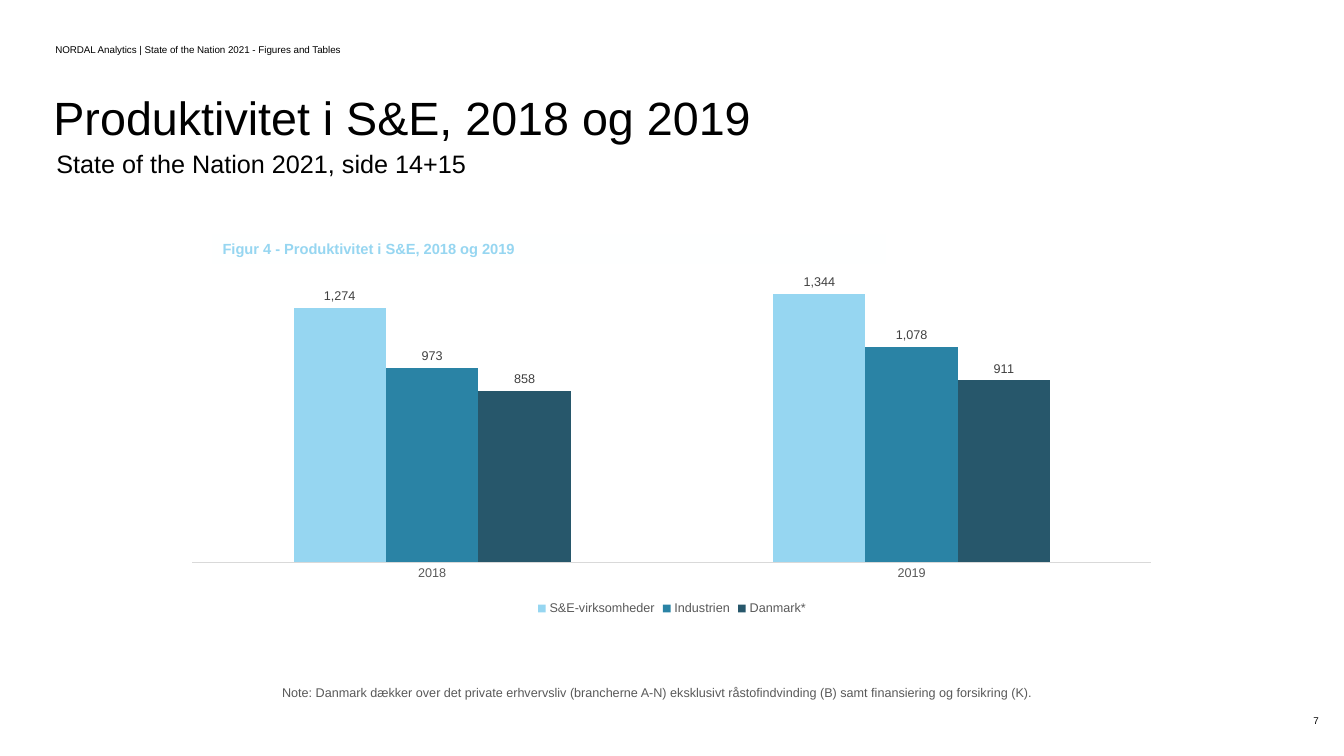
import pptx
import pptx.chart.data
import pptx.dml.color
import pptx.enum.chart
import pptx.enum.shapes
import pptx.enum.text
import pptx.oxml
import pptx.util

ALIGN = pptx.enum.text.PP_ALIGN
ANCHOR = pptx.enum.text.MSO_ANCHOR
FONT = "Arial"
WIDTH, HEIGHT = 13.33, 7.5
MARGIN = 0.46

TITLE = "Produktivitet i S&E, 2018 og 2019"
SUBTITLE = "State of the Nation 2021, side 14+15"
RUNNING_HEAD = "NORDAL Analytics | State of the Nation 2021 - Figures and Tables"
FIGURE_TITLE = "Figur 4 - Produktivitet i S&E, 2018 og 2019"
NOTE = ("Note: Danmark dækker over det private erhvervsliv (brancherne A-N) eksklusivt "
        "råstofindvinding (B) samt finansiering og forsikring (K).")
PAGE_NUMBER = "7"

YEARS = ["2018", "2019"]
SERIES = [
    ("S&E-virksomheder", (1274, 1344), "96D6F1"),
    ("Industrien", (973, 1078), "2A83A5"),
    ("Danmark*", (858, 911), "27576B"),
]
NUMBER_FORMAT = '_-* #,##0_-;\\-* #,##0_-;_-* "-"??_-;_-@_'
CHART_AREA = (1.71, 2.33, 9.91, 3.82)
PLOT_SHARES = {"x": 0.02, "y": 0.02, "w": 0.96, "h": 0.83}


def rgb(value):
    return pptx.dml.color.RGBColor.from_string(value)


def inches(*lengths):
    return [pptx.util.Inches(length) for length in lengths]


def set_font(font, size, color, bold=False):
    font.name = FONT
    font.size = pptx.util.Pt(size)
    font.bold = bold
    font.color.rgb = rgb(color)


def write(shape, text, size, color="000000", bold=False, align=ALIGN.LEFT,
          anchor=ANCHOR.TOP, spacing=None, inset=0.1):
    frame = shape.text_frame
    frame.word_wrap = True
    frame.auto_size = pptx.enum.text.MSO_AUTO_SIZE.NONE
    frame.vertical_anchor = anchor
    frame.margin_left = frame.margin_right = pptx.util.Inches(inset)
    frame.margin_top = frame.margin_bottom = pptx.util.Inches(0.05)
    para = frame.paragraphs[0]
    para.alignment = align
    para.line_spacing = spacing
    span = para.add_run()
    span.text = text
    set_font(span.font, size, color, bold)


def add_text(page, area, text, size, **style):
    write(page.shapes.add_textbox(*inches(*area)), text, size, **style)


def add_title(page):
    title = page.shapes.title
    title.left, title.top, title.width, title.height = inches(MARGIN, 0.92, 11.56, 0.58)
    write(title, TITLE, 33.3, anchor=ANCHOR.MIDDLE, spacing=0.8, inset=0.07)


def add_figure_title(page):
    box = page.shapes.add_shape(pptx.enum.shapes.MSO_SHAPE.RECTANGLE,
                                *inches(2.11, 2.33, 6.67, 0.28))
    box.shadow.inherit = False
    box.fill.solid()
    box.fill.fore_color.rgb = rgb("FEFFFF")
    box.line.fill.background()
    write(box, FIGURE_TITLE, 10.5, color="96D6F1", bold=True)


def fix_plot_area(chart):
    """Pin the plot's inner area and leave the chart background unfilled."""
    names = pptx.oxml.ns.nsdecls("c", "a")
    places = "".join(f'<c:{key}Mode val="edge"/>' for key in "xy")
    places += "".join(f'<c:{key} val="{share}"/>' for key, share in PLOT_SHARES.items())
    layout = pptx.oxml.parse_xml(
        f'<c:layout {names}><c:manualLayout><c:layoutTarget val="inner"/>'
        f'{places}</c:manualLayout></c:layout>')
    space = chart.element
    plot_area = space.find(".//" + pptx.oxml.ns.qn("c:plotArea"))
    for old in plot_area.findall(pptx.oxml.ns.qn("c:layout")):
        plot_area.remove(old)
    plot_area.insert(0, layout)
    space.find(pptx.oxml.ns.qn("c:chart")).addnext(pptx.oxml.parse_xml(
        f'<c:spPr {names}><a:noFill/><a:ln><a:noFill/></a:ln></c:spPr>'))


def add_productivity_chart(page):
    data = pptx.chart.data.CategoryChartData(number_format=NUMBER_FORMAT)
    data.categories = YEARS
    for name, values, _ in SERIES:
        data.add_series(name, values)
    kinds = pptx.enum.chart
    chart = page.shapes.add_chart(kinds.XL_CHART_TYPE.COLUMN_CLUSTERED,
                                  *inches(*CHART_AREA), data).chart
    set_font(chart.font, 10, "000000")
    chart.has_title = False
    chart.has_legend = True
    chart.legend.position = kinds.XL_LEGEND_POSITION.BOTTOM
    chart.legend.include_in_layout = False
    set_font(chart.legend.font, 9, "595959")

    years = chart.category_axis
    years.major_tick_mark = kinds.XL_TICK_MARK.NONE
    years.format.line.color.rgb = rgb("D9D9D9")
    years.format.line.width = pptx.util.Pt(0.75)
    set_font(years.tick_labels.font, 9, "595959")

    scale = chart.value_axis
    scale.minimum_scale, scale.maximum_scale = 0, 1600
    scale.has_major_gridlines = False
    scale.visible = False

    plot = chart.plots[0]
    plot.gap_width = 219
    plot.overlap = 0
    plot.vary_by_categories = False
    for bars, (_, _, color) in zip(plot.series, SERIES):
        bars.format.fill.solid()
        bars.format.fill.fore_color.rgb = rgb(color)
        labels = bars.data_labels
        labels.show_value = True
        labels.number_format = NUMBER_FORMAT
        labels.number_format_is_linked = False
        labels.position = kinds.XL_LABEL_POSITION.OUTSIDE_END
        set_font(labels.font, 9, "404040")
    fix_plot_area(chart)


def main():
    deck = pptx.Presentation()
    deck.slide_width, deck.slide_height = inches(WIDTH, HEIGHT)
    page = deck.slides.add_slide(deck.slide_layouts[5])
    add_text(page, (10.18, 6.95, 3, 0.4), PAGE_NUMBER, 7,
             align=ALIGN.RIGHT, anchor=ANCHOR.MIDDLE)
    add_text(page, (0.45, 0.29, 4.5, 0.4), RUNNING_HEAD, 7, anchor=ANCHOR.MIDDLE)
    add_title(page)
    add_text(page, (MARGIN, 1.42, 4.78, 0.4), SUBTITLE, 18)
    add_figure_title(page)
    add_text(page, (2.7, 6.75, 8.36, 0.25), NOTE, 9, color="595959")
    add_productivity_chart(page)
    deck.save("out.pptx")


if __name__ == "__main__":
    main()
